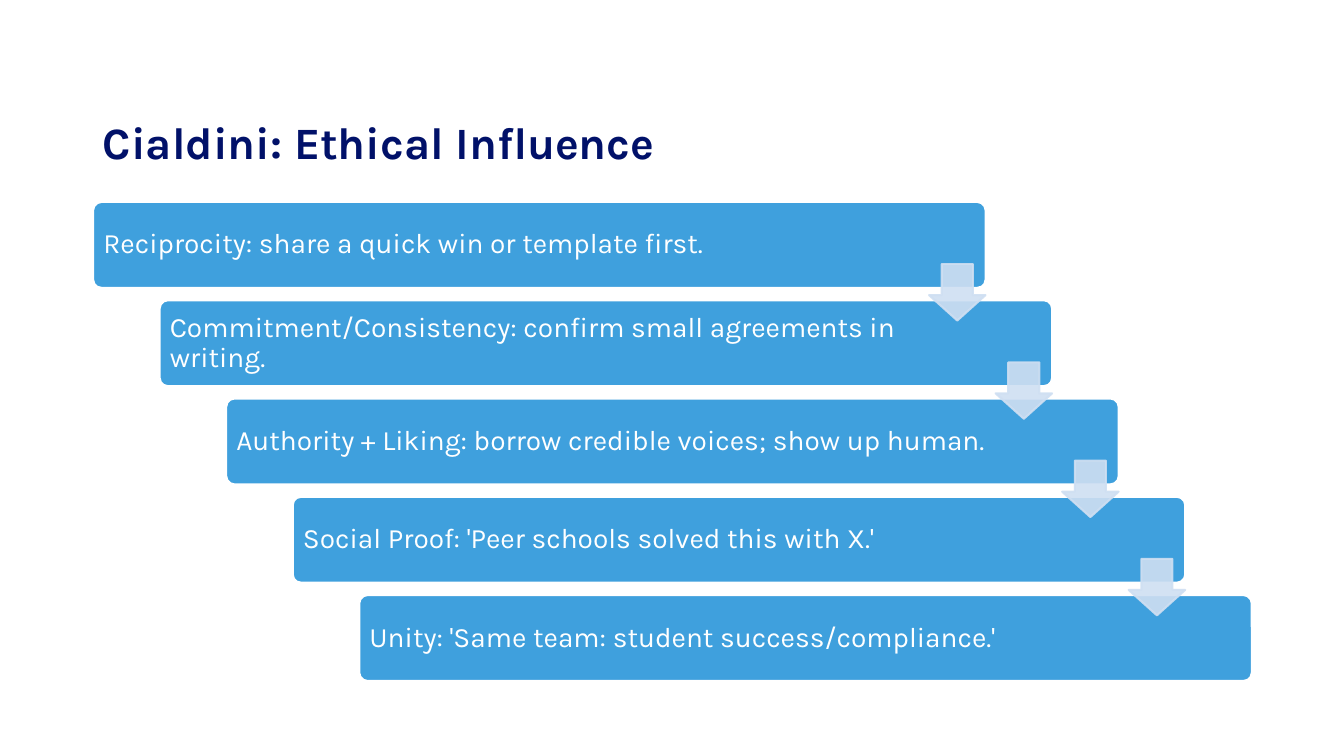
"""Build the slide on ethical influence as a staircase of five principles."""
from lxml.etree import SubElement
from pptx import Presentation
from pptx.dml.color import RGBColor
from pptx.enum.shapes import MSO_SHAPE
from pptx.enum.text import MSO_ANCHOR, PP_ALIGN
from pptx.oxml.ns import qn
from pptx.util import Inches, Pt

PRINCIPLES = [
    "Reciprocity: share a quick win or template first.",
    "Commitment/Consistency: confirm small agreements in writing.",
    "Authority + Liking: borrow credible voices; show up human.",
    "Social Proof: 'Peer schools solved this with X.'",
    "Unity: 'Same team: student success/compliance.'",
]
STEP_X, STEP_Y = 0.66, 0.975


def color(value):
    return RGBColor.from_string(value)


def write_text(shape, text, frame_format, font_format, font_color):
    frame = shape.text_frame
    frame.text = text
    for name, value in frame_format.items():
        setattr(frame, name, value)
    paragraph = frame.paragraphs[0]
    paragraph.alignment = PP_ALIGN.LEFT
    paragraph.line_spacing = 0.9
    for name, value in font_format.items():
        setattr(paragraph.font, name, value)
    paragraph.font.color.rgb = color(font_color)


presentation = Presentation()
presentation.slide_width = Inches(13.33)
presentation.slide_height = Inches(7.5)
slide = presentation.slides.add_slide(presentation.slide_layouts[5])

title = slide.shapes.title
title.left, title.top = Inches(0.92), Inches(0.4)
title.width, title.height = Inches(11.5), Inches(1.45)
title_frame = {
    "vertical_anchor": MSO_ANCHOR.BOTTOM,
    "margin_bottom": Inches(0.17),
    "word_wrap": True,
}
title_font = {"name": "Karla", "size": Pt(32), "bold": True}
write_text(title, "Cialdini: Ethical Influence", title_frame, title_font, "011169")

bar_frame = {
    "vertical_anchor": MSO_ANCHOR.MIDDLE,
    "word_wrap": True,
    "margin_left": Inches(0.08),
    "margin_right": Inches(1.3),
    "margin_top": Inches(0.08),
    "margin_bottom": Inches(0.08),
}
bar_font = {"name": "Karla", "size": Pt(20)}
for index, principle in enumerate(PRINCIPLES):
    bar = slide.shapes.add_shape(
        MSO_SHAPE.ROUNDED_RECTANGLE,
        Inches(0.92 + index * STEP_X), Inches(2 + index * STEP_Y),
        Inches(8.86), Inches(0.86),
    )
    bar.adjustments[0] = 0.1
    bar.shadow.inherit = False
    bar.fill.solid()
    bar.fill.fore_color.rgb = color("3FA0DD")
    bar.line.color.rgb = color("FFFFFF")
    bar.line.width = Pt(2)
    write_text(bar, principle, bar_frame, bar_font, "FFFFFF")

for index in range(len(PRINCIPLES) - 1):
    arrow = slide.shapes.add_shape(
        MSO_SHAPE.DOWN_ARROW,
        Inches(9.215 + index * STEP_X), Inches(2.62 + index * STEP_Y),
        Inches(0.56), Inches(0.56),
    )
    arrow.adjustments[0] = 0.55
    arrow.adjustments[1] = 0.45
    arrow.shadow.inherit = False
    arrow.fill.solid()
    arrow.fill.fore_color.rgb = color("CFDFF2")
    arrow.line.color.rgb = color("CFDFF2")
    arrow.line.width = Pt(1.5)
    for tone in arrow.element.spPr.iter(qn("a:srgbClr")):
        SubElement(tone, qn("a:alpha")).set("val", "90000")

presentation.save("out.pptx")
